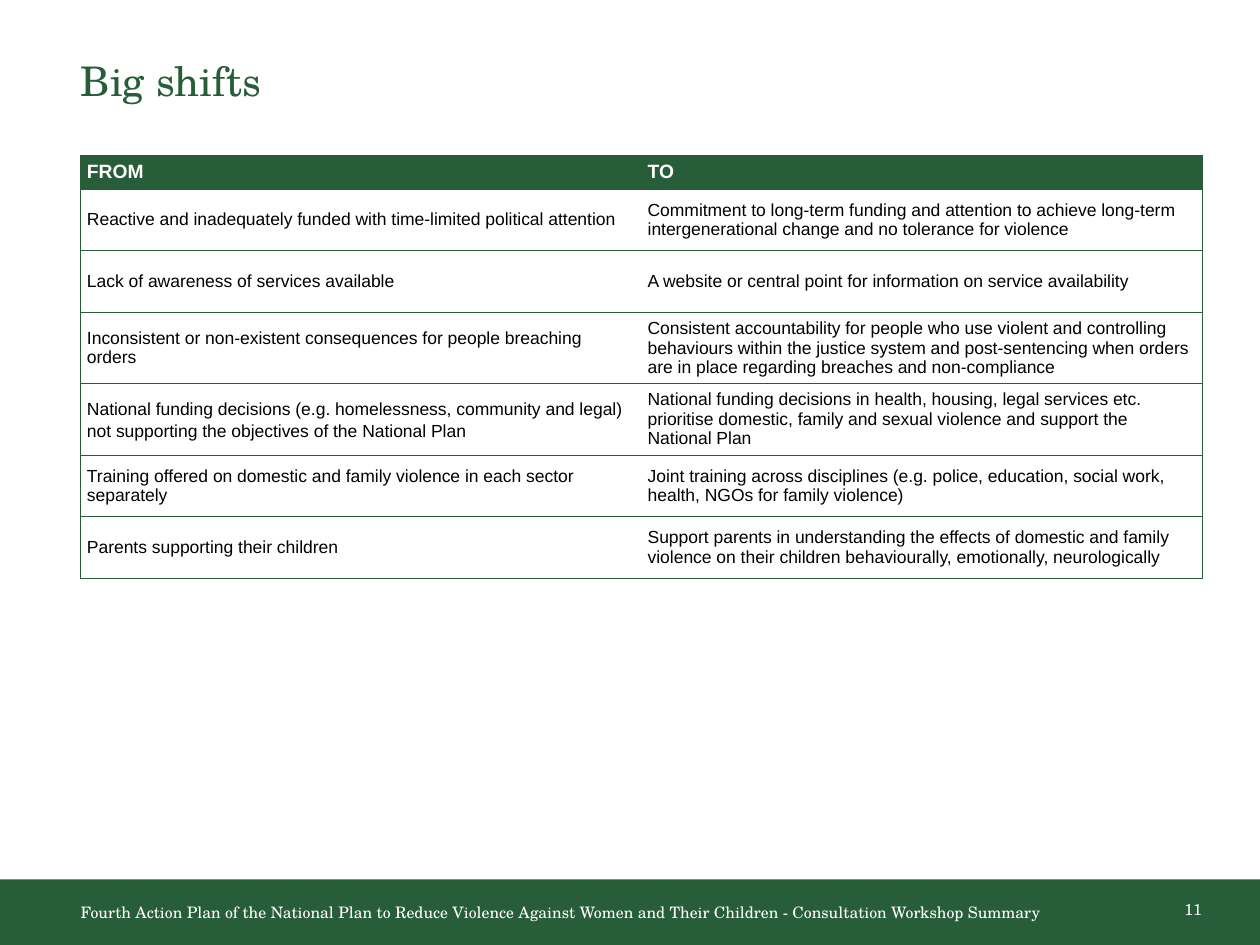
from lxml import etree
from pptx import Presentation
from pptx.dml.color import RGBColor
from pptx.enum.shapes import MSO_SHAPE
from pptx.enum.text import MSO_ANCHOR, MSO_AUTO_SIZE, PP_ALIGN
from pptx.oxml.ns import qn
from pptx.util import Inches, Pt

RECT = MSO_SHAPE.RECTANGLE
TOP, MIDDLE = MSO_ANCHOR.TOP, MSO_ANCHOR.MIDDLE
LEFT, RIGHT = PP_ALIGN.LEFT, PP_ALIGN.RIGHT

GREEN = RGBColor(0x27, 0x5D, 0x38)
WHITE = RGBColor(0xFF, 0xFF, 0xFF)
BLACK = RGBColor(0x00, 0x00, 0x00)
SERIF, SANS = "TeX Gyre Schola", "Arial"

TITLE = "Big shifts"
FOOTER = ("Fourth Action Plan of the National Plan to Reduce Violence Against "
          "Women and Their Children - Consultation Workshop Summary")
PAGE = "11"
HEADER = ("FROM", "TO")
SHIFTS = [
    ("Reactive and inadequately funded with time-limited political attention",
     "Commitment to long-term funding and attention to achieve long-term "
     "intergenerational change and no tolerance for violence"),
    ("Lack of awareness of services available",
     "A website or central point for information on service availability"),
    ("Inconsistent or non-existent consequences for people breaching orders",
     "Consistent accountability for people who use violent and controlling "
     "behaviours within the justice system and post-sentencing when orders "
     "are in place regarding breaches and non-compliance"),
    ("National funding decisions (e.g. homelessness, community and legal) "
     "not supporting the objectives of the National Plan",
     "National funding decisions in health, housing, legal services etc. "
     "prioritise domestic, family and sexual violence and support the "
     "National Plan"),
    ("Training offered on domestic and family violence in each sector separately",
     "Joint training across disciplines (e.g. police, education, social work, "
     "health, NGOs for family violence)"),
    ("Parents supporting their children",
     "Support parents in understanding the effects of domestic and family "
     "violence on their children behaviourally, emotionally, neurologically"),
]
LOOSE_CELL = (4, 0)  # row, column of the cell with wider line spacing

MARGIN, TABLE_TOP, TABLE_W = 0.64, 1.23, 8.9
HEADER_H, ROW_H = 0.27, 0.49
BAR_TOP = 6.98
NO_STYLE = "{2D5ABB26-0587-4C30-8999-92F81FD0307C}"


def write(tf, text, size, color, font=SERIF, bold=False, align=LEFT, spacing=None):
    p = tf.paragraphs[0]
    p.alignment = align
    if spacing:
        p.line_spacing = spacing
    r = p.add_run()
    r.text = text
    r.font.size, r.font.name, r.font.bold = Pt(size), font, bold
    r.font.color.rgb = color
    return p


def strip_frame(tf, anchor, wrap=True):
    """Remove insets and autofit, and set anchor and wrapping."""
    tf.margin_left = tf.margin_right = tf.margin_top = tf.margin_bottom = 0
    tf.auto_size = MSO_AUTO_SIZE.NONE
    tf.vertical_anchor, tf.word_wrap = anchor, wrap


def add_text(slide, box, text, wrap=True, **fmt):
    tf = slide.shapes.add_textbox(*map(Inches, box)).text_frame
    strip_frame(tf, MIDDLE, wrap)
    write(tf, text, **fmt)


def set_borders(cell, sides):
    """Draw thin green lines on the given sides, in the order L, R, T, B."""
    tc_pr = cell._tc.get_or_add_tcPr()
    for i, side in enumerate(sides):
        ln = etree.Element(qn("a:ln" + side), w=str(Pt(0.5)))
        fill = etree.SubElement(ln, qn("a:solidFill"))
        etree.SubElement(fill, qn("a:srgbClr"), val=str(GREEN))
        tc_pr.insert(i, ln)


def add_shift_table(slide):
    rows = [HEADER] + SHIFTS
    height = HEADER_H + ROW_H * len(SHIFTS)
    table = slide.shapes.add_table(
        len(rows), 2, Inches(MARGIN), Inches(TABLE_TOP),
        Inches(TABLE_W), Inches(height)).table
    table.horz_banding = False
    table._tbl.tblPr.find(qn("a:tableStyleId")).text = NO_STYLE
    for i, row in enumerate(rows):
        head = i == 0
        table.rows[i].height = Inches(HEADER_H if head else ROW_H)
        for j, text in enumerate(row):
            cell = table.cell(i, j)
            cell.margin_left = cell.margin_right = Inches(0.05)
            cell.margin_top = cell.margin_bottom = Inches(0.05)
            cell.vertical_anchor = MIDDLE
            if head:
                cell.fill.solid()
                cell.fill.fore_color.rgb = GREEN
            else:
                cell.fill.background()
            set_borders(cell, "RTB" if j else "LTB")
            p = write(cell.text_frame, text, 11 if head else 10,
                      WHITE if head else BLACK, font=SANS, bold=head)
            if (i, j) == LOOSE_CELL:
                p.line_spacing, p.space_before = 1.1, Pt(10)


def main():
    prs = Presentation()
    prs.slide_width, prs.slide_height = Inches(10), Inches(7.5)
    slide = prs.slides.add_slide(prs.slide_layouts[5])

    bar = slide.shapes.add_shape(RECT, 0, Inches(BAR_TOP), Inches(10),
                                 Inches(7.5 - BAR_TOP))
    bar.shadow.inherit = False
    bar.fill.solid()
    bar.fill.fore_color.rgb = GREEN
    bar.line.fill.background()

    title = slide.shapes.title
    title.left, title.top = Inches(MARGIN), Inches(0.52)
    title.width, title.height = Inches(8.72), Inches(0.36)
    strip_frame(title.text_frame, TOP)
    write(title.text_frame, TITLE, 23.3, GREEN, spacing=0.8)

    add_shift_table(slide)
    add_text(slide, (MARGIN, 7.17, 7.85, 0.14), FOOTER, size=9, color=WHITE)
    add_text(slide, (9.4, 7.15, 0.14, 0.14), PAGE, wrap=False, size=9,
             color=WHITE, align=RIGHT)
    prs.save("out.pptx")


if __name__ == "__main__":
    main()
